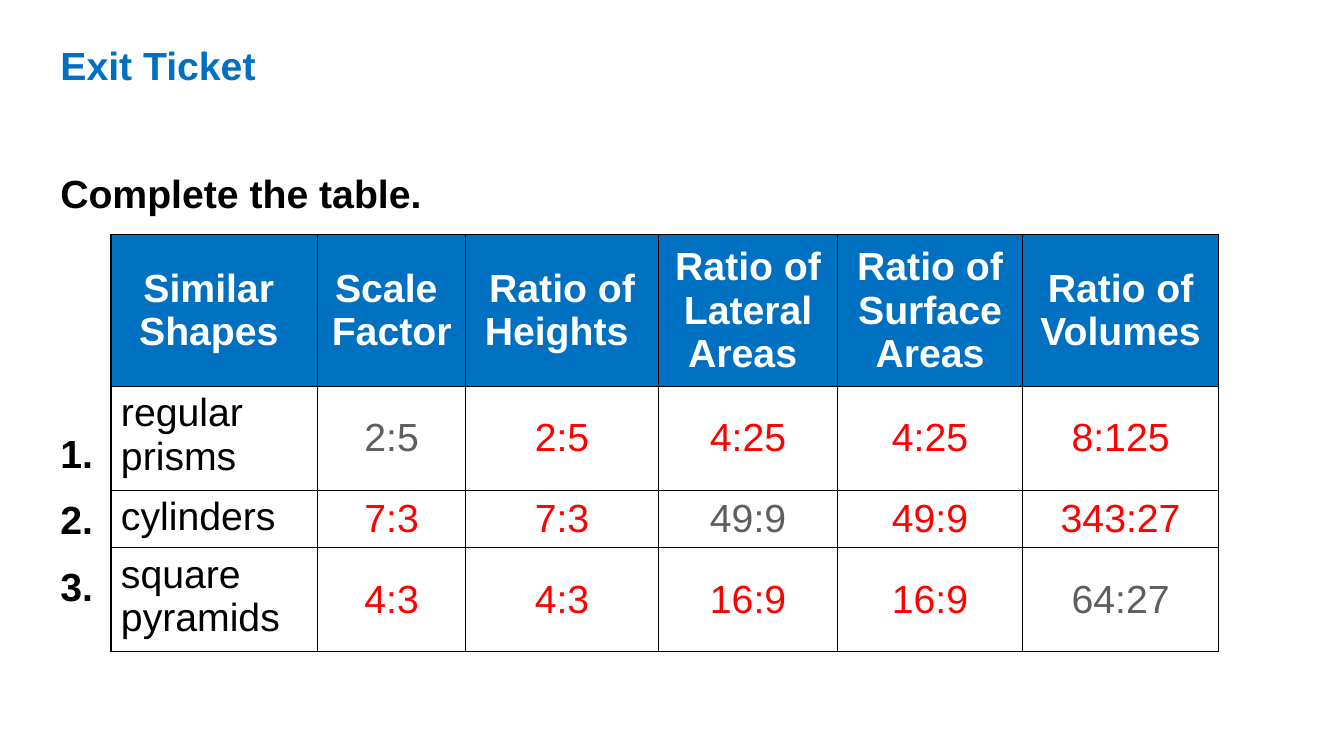
from lxml import etree
from pptx import Presentation
from pptx.dml.color import RGBColor
from pptx.enum.text import MSO_ANCHOR, MSO_AUTO_SIZE, PP_ALIGN
from pptx.oxml.ns import qn
from pptx.util import Inches, Pt

TOP, MID = MSO_ANCHOR.TOP, MSO_ANCHOR.MIDDLE
LEFT, CENTER = PP_ALIGN.LEFT, PP_ALIGN.CENTER
FIXED = MSO_AUTO_SIZE.NONE
COLORS = {"blue": "0070C0", "black": "000000", "white": "FFFFFF",
          "gray": "5E5E5B", "red": "FF0000"}
WIDTHS = [2.05, 1.47, 1.91, 1.78, 1.83, 1.95]
HEIGHTS = [1.4, 0.97, 0.53, 0.97]
HEADS = ["Similar \nShapes ", "Scale \nFactor", "Ratio of Heights ",
         "Ratio of Lateral Areas ", "Ratio of Surface Areas", "Ratio of Volumes"]
ROWS = [["regular prisms", "2:5", "2:5", "4:25", "4:25", "8:125"],
        ["cylinders", "7:3", "7:3", "49:9", "49:9", "343:27"],
        ["square pyramids", "4:3", "4:3", "16:9", "16:9", "64:27"]]
GIVEN = {(1, 1), (2, 3), (3, 5)}


class Ticket:
    """Holds the text style and the slide, and adds each kind of element."""

    def __init__(self, deck):
        self.font, self.size = "Arial", Pt(28)
        self.slide = deck.slides.add_slide(deck.slide_layouts[5])

    def label(self, frame, text, color, bold=False, align=LEFT):
        frame.text = text
        frame.word_wrap = True
        for par in frame.paragraphs:
            par.alignment = align
            font = par.font
            font.name, font.size, font.bold = self.font, self.size, bold
            font.color.rgb = RGBColor.from_string(COLORS[color])

    def title(self, text, x, y, w, h):
        shape = self.slide.shapes.title
        shape.left, shape.top = Inches(x), Inches(y)
        shape.width, shape.height = Inches(w), Inches(h)
        frame = shape.text_frame
        self.label(frame, text, "blue", True)
        frame.vertical_anchor = TOP
        frame.auto_size = FIXED

    def body(self, lines, gaps, x, y, w, h):
        box = self.slide.shapes.add_textbox(Inches(x), Inches(y), Inches(w), Inches(h))
        frame = box.text_frame
        self.label(frame, "\n".join(lines), "black", True)
        for par, gap in zip(frame.paragraphs, gaps):
            par.space_before = Pt(gap)

    def border(self, cell):
        props = cell._tc.get_or_add_tcPr()
        for spot, side in enumerate(("a:lnL", "a:lnR", "a:lnT", "a:lnB")):
            line = etree.Element(qn(side), w=str(Pt(1)))
            fill = etree.SubElement(line, qn("a:solidFill"))
            etree.SubElement(fill, qn("a:srgbClr"), val=COLORS["black"])
            props.insert(spot, line)

    def table(self, rows, x, y):
        frame = self.slide.shapes.add_table(
            len(rows), len(WIDTHS), Inches(x), Inches(y),
            Inches(sum(WIDTHS)), Inches(sum(HEIGHTS)))
        table = frame.table
        table.horz_banding = table.first_row = False
        for col, width in zip(table.columns, WIDTHS):
            col.width = Inches(width)
        for r, row in enumerate(rows):
            table.rows[r].height = Inches(HEIGHTS[r])
            for c, text in enumerate(row):
                self.cell(table.cell(r, c), text, r, c)

    def cell(self, cell, text, r, c):
        head, name = r == 0, r > 0 and c == 0
        if head:
            color = "white"
            cell.fill.solid()
            cell.fill.fore_color.rgb = RGBColor.from_string(COLORS["blue"])
        else:
            color = "black" if name else "gray" if (r, c) in GIVEN else "red"
            cell.fill.background()
        self.label(cell.text_frame, text, color, head, LEFT if name else CENTER)
        cell.vertical_anchor = TOP if name else MID
        self.border(cell)


def main():
    deck = Presentation()
    deck.slide_width, deck.slide_height = Inches(13.33), Inches(7.5)
    page = Ticket(deck)
    page.title("Exit Ticket", 0.5, 0.36, 8.68, 1.2)
    page.body(["Complete the table.", "1.", "2.", "3."], [0, 152, 14, 14],
              0.5, 1.63, 11.18, 4.66)
    page.table([HEADS] + ROWS, 1.1, 2.33)
    deck.save("out.pptx")


if __name__ == "__main__":
    main()
